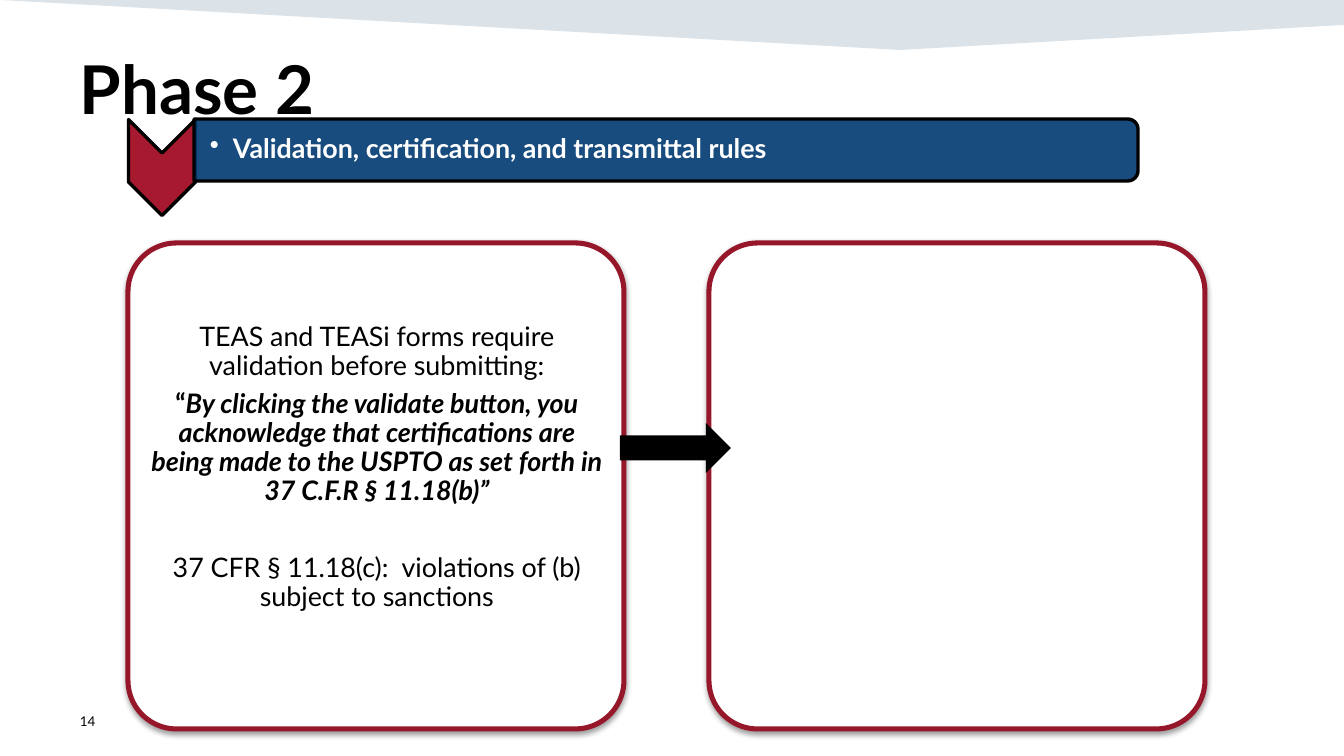
import dataclasses

import pptx
import pptx.dml.color
import pptx.enum.shapes
import pptx.enum.text
import pptx.oxml
import pptx.oxml.ns
import pptx.util

SCALE = 914400 / 121
KINDS = pptx.enum.shapes.MSO_SHAPE
ALIGN = pptx.enum.text.PP_ALIGN
ANCHOR = pptx.enum.text.MSO_ANCHOR
NS = 'xmlns:a="http://schemas.openxmlformats.org/drawingml/2006/main"'


@dataclasses.dataclass(frozen=True)
class Theme:
    font: str = "Lato"
    black: str = "000000"
    white: str = "FFFFFF"
    mist: str = "164469"
    navy: str = "003971"
    red: str = "A6192E"
    frame: str = "97172A"
    title: int = 40
    body: int = 16
    small: int = 8


THEME = Theme()


def px(count):
    return round(count * SCALE)


def rgb(color):
    return pptx.dml.color.RGBColor.from_string(color)


def paint(shape, color, alpha=100, line=None, width=2):
    """Set fill, opacity in percent and outline, without a shadow."""
    shape.shadow.inherit = False
    shape.fill.solid()
    shape.fill.fore_color.rgb = rgb(color)
    if alpha < 100:
        tone = shape.fill._xPr.find(".//" + pptx.oxml.ns.qn("a:srgbClr"))
        tone.append(pptx.oxml.parse_xml(f'<a:alpha {NS} val="{alpha * 1000}"/>'))
    if line:
        shape.line.color.rgb = rgb(line)
        shape.line.width = pptx.util.Pt(width)
    else:
        shape.line.fill.background()


def add_block(slide, kind, box, color, turn=0, **style):
    shape = slide.shapes.add_shape(kind, *map(px, box))
    shape.rotation = turn
    paint(shape, color, **style)
    return shape


def add_frame(slide, box):
    """Add a rounded white frame with a soft shadow below it."""
    frame = add_block(slide, KINDS.ROUNDED_RECTANGLE, box, THEME.white,
                      line=THEME.frame, width=3)
    frame.adjustments[0] = 0.1
    effects = frame._element.spPr.find(pptx.oxml.ns.qn("a:effectLst"))
    effects.append(pptx.oxml.parse_xml(
        f'<a:outerShdw {NS} blurRad="39400" dist="20300" dir="5400000" rotWithShape="0">'
        '<a:srgbClr val="000000"><a:alpha val="38000"/></a:srgbClr></a:outerShdw>'))


def set_font(run, size, color=THEME.black, bold=False, italic=False):
    font = run.font
    font.name = THEME.font
    font.size = pptx.util.Pt(size)
    font.color.rgb = rgb(color)
    font.bold = bold
    font.italic = italic


def set_frame(shape, anchor, side=12, edge=6):
    frame = shape.text_frame
    frame.word_wrap = True
    frame.auto_size = pptx.enum.text.MSO_AUTO_SIZE.NONE
    frame.vertical_anchor = anchor
    frame.margin_left = frame.margin_right = px(side)
    frame.margin_top = frame.margin_bottom = px(edge)
    return frame


def add_text(slide, box, text, size, color=THEME.black, bold=False, **inset):
    """Add a text box centred upright; return its text frame."""
    shape = slide.shapes.add_textbox(*map(px, box))
    frame = set_frame(shape, ANCHOR.MIDDLE, **inset)
    frame.text = text
    for para in frame.paragraphs:
        for run in para.runs:
            set_font(run, size, color, bold)
    return frame


def add_bullet(para, indent):
    props = para._p.get_or_add_pPr()
    props.set("marL", str(px(indent)))
    props.set("indent", str(-px(indent)))
    props.append(pptx.oxml.parse_xml(f'<a:buChar {NS} char="•"/>'))


def add_roof(slide):
    maker = slide.shapes.build_freeform(0, 0, scale=SCALE)
    maker.add_line_segments([(1344, 0), (1344, 25), (900, 50)], close=True)
    paint(maker.convert_to_shape(), THEME.mist, alpha=15)


def set_title(slide, text):
    title = slide.shapes.title
    title.left, title.top, title.width, title.height = map(px, (68, 41, 1210, 115))
    frame = set_frame(title, ANCHOR.TOP)
    frame.text = text
    frame.paragraphs[0].alignment = ALIGN.LEFT
    set_font(frame.paragraphs[0].runs[0], THEME.title, bold=True)


def add_banner(slide, text):
    add_block(slide, KINDS.CHEVRON, (114, 134, 96, 67), THEME.red,
              turn=90, line=THEME.black)
    add_block(slide, KINDS.ROUND_2_SAME_RECTANGLE, (635, -322, 62, 944),
              THEME.navy, turn=90, alpha=90, line=THEME.black)
    frame = add_text(slide, (195, 122, 940, 56), text, THEME.body,
                     THEME.white, bold=True, side=15, edge=1)
    frame.paragraphs[0].line_spacing = 0.9
    add_bullet(frame.paragraphs[0], 23)


def add_rules(slide):
    text = "\n".join([
        "TEAS and TEASi forms require validation before submitting:",
        "“",
        "37 CFR § 11.18(c):  violations of (b) subject to sanctions"])
    frame = add_text(slide, (143, 322, 468, 292), text, THEME.body, side=8, edge=0)
    for para in frame.paragraphs:
        para.alignment = ALIGN.CENTER
        para.line_spacing = 0.9
        para.space_after = pptx.util.Pt(5.6)
    quote, last = frame.paragraphs[1:]
    quote.runs[0].font.bold = True
    run = quote.add_run()
    run.text = ("By clicking the validate button, you acknowledge that "
                "certifications are being made to the USPTO as set forth in "
                "37 C.F.R § 11.18(b)”")
    set_font(run, THEME.body, bold=True, italic=True)
    last.space_before = pptx.util.Pt(23)


def main():
    deck = pptx.Presentation()
    deck.slide_width, deck.slide_height = px(1344), px(756)
    slide = deck.slides.add_slide(deck.slide_layouts[5])
    add_roof(slide)
    set_title(slide, "Phase 2")
    add_banner(slide, "Validation, certification, and transmittal rules")
    for left in (128, 709):
        add_frame(slide, (left, 243, 496, 486))
    add_rules(slide)
    add_block(slide, KINDS.RIGHT_ARROW, (620, 423, 111, 50), THEME.black)
    add_text(slide, (68, 701, 302, 40), "14", THEME.small)
    deck.save("out.pptx")


if __name__ == "__main__":
    main()
